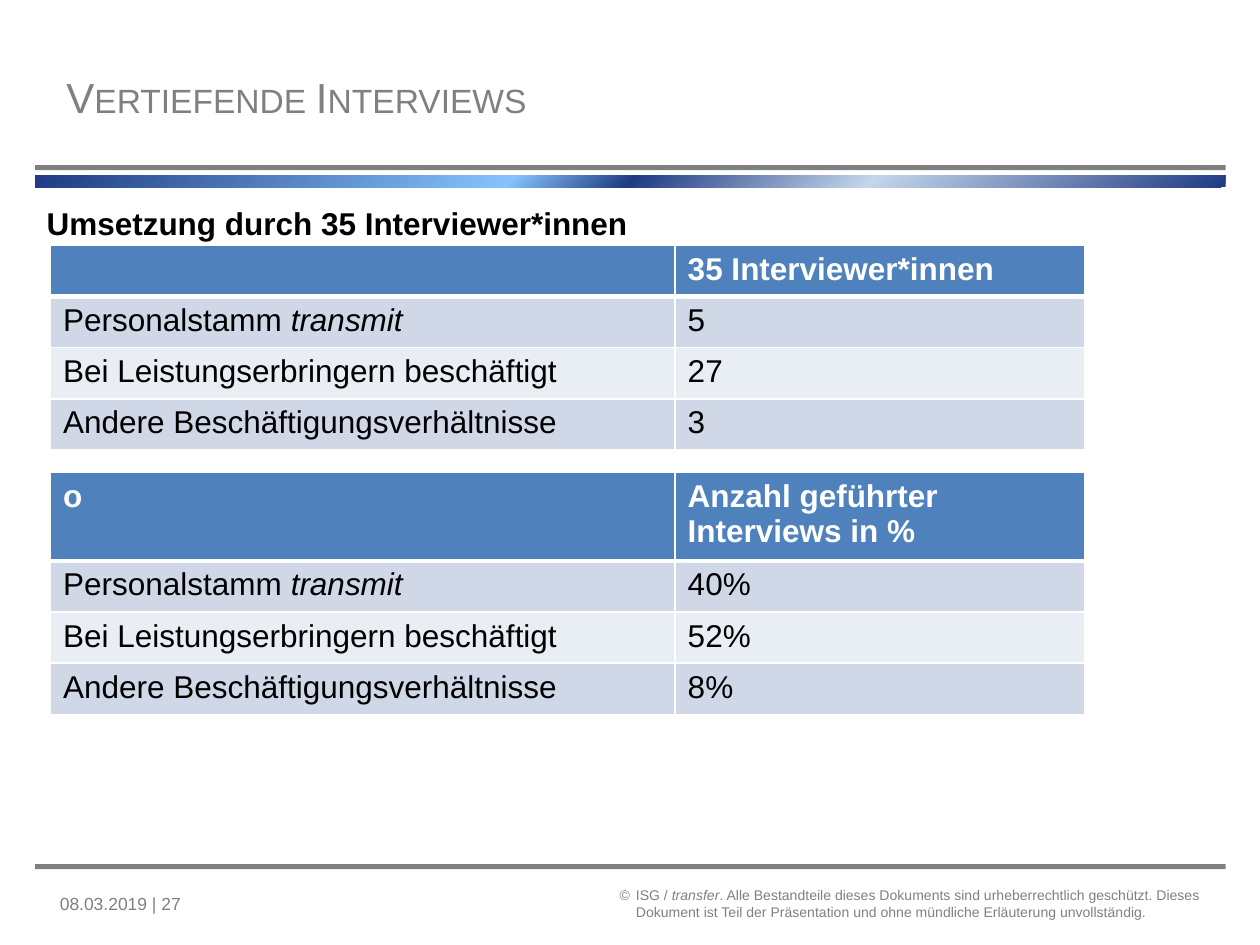
from lxml import etree
from pptx import Presentation, util as u
from pptx.dml.color import RGBColor
from pptx.enum import shapes, text
from pptx.oxml import parse_xml
from pptx.oxml.ns import nsdecls, qn

GREY, BLACK, WHITE = "808080", "000000", "FFFFFF"
BLUE, BANDS = "4F81BD", ("D0D8E8", "E9EDF4")
STOPS = ((0, "203B84"), (40, "85C2FF"), (50, "203B84"), (70, "C4D6EB"), (100, "203B84"))
FIRM = "transmit"
LABELS = (
    [("Personalstamm ", {}), (FIRM, {"slant": True})],
    [("Bei Leistungserbringern beschäftigt", {})],
    [("Andere Beschäftigungsverhältnisse", {})],
)


def paint(target, color):
    target.solid()
    target.fore_color.rgb = RGBColor.from_string(color)


def add_run(para, words, size, color, bold=False, slant=False):
    run = para.add_run()
    run.text = words
    font = run.font
    font.name, font.size = "Arial", u.Pt(size)
    font.bold, font.italic = bold, slant
    font.color.rgb = RGBColor.from_string(color)
    return run


def add_bar(slide, top, high):
    bar = slide.shapes.add_shape(
        shapes.MSO_SHAPE.RECTANGLE, u.Cm(0.71), u.Cm(top), u.Cm(24), u.Cm(high))
    bar.shadow.inherit = False
    paint(bar.fill, GREY)
    bar.line.fill.background()
    return bar


def blend(bar):
    """Fill the bar with a gradient that spreads from its top left corner."""
    stops = "".join(
        f'<a:gs pos="{pos * 1000}"><a:srgbClr val="{color}"/></a:gs>' for pos, color in STOPS)
    grad = parse_xml(
        f'<a:gradFill {nsdecls("a")} rotWithShape="1"><a:gsLst>{stops}</a:gsLst>'
        '<a:path path="circle"><a:fillToRect r="100000" b="100000"/></a:path></a:gradFill>')
    props = bar.fill._xPr
    props.replace(props.find(qn("a:solidFill")), grad)


def add_box(slide, left, top, wide, high, anchor=text.MSO_ANCHOR.MIDDLE):
    """Add a wrapping text box and return its first paragraph."""
    frame = slide.shapes.add_textbox(u.Cm(left), u.Cm(top), u.Cm(wide), u.Cm(high)).text_frame
    frame.word_wrap = True
    frame.vertical_anchor = anchor
    return frame.paragraphs[0]


def add_edge(cell, side, width):
    props = cell._tc.get_or_add_tcPr()
    edge = etree.SubElement(props, qn(f"a:ln{side}"), w=str(u.Pt(width)))
    fill = etree.SubElement(edge, qn("a:solidFill"))
    etree.SubElement(fill, qn("a:srgbClr"), val=WHITE)


def fill_cell(cell, runs, row):
    head = row == 0
    for side in "LRTB" if head else "LRB":
        add_edge(cell, side, 3 if head and side == "B" else 1)
    paint(cell.fill, BLUE if head else BANDS[(row - 1) % 2])
    para = cell.text_frame.paragraphs[0]
    para.font.size = u.Pt(18)
    for words, style in runs:
        add_run(para, words, 18, WHITE if head else BLACK, bold=head, **style)


def add_grid(slide, top, high, heads, values):
    """Add a table whose header row has its own height."""
    rows = [[[(head, {})] if head else [] for head in heads]]
    rows += [[label, [(value, {})]] for label, value in zip(LABELS, values)]
    grid = slide.shapes.add_table(
        len(rows), 2, u.Cm(1.02), u.Cm(top), u.Cm(20.85), u.Cm(high + 3.09)).table
    for col, wide in zip(grid.columns, (12.59, 8.26)):
        col.width = u.Cm(wide)
    for i, row in enumerate(rows):
        grid.rows[i].height = u.Cm(1.03 if i else high)
        for j, runs in enumerate(row):
            fill_cell(grid.cell(i, j), runs, i)


def add_foot(slide):
    date = add_box(slide, 0.71, 17.7, 3.43, 1.02)
    date.alignment = text.PP_ALIGN.CENTER
    add_run(date, "08.03.2019 | 27", 10, GREY)

    note = add_box(slide, 12.24, 17.7, 12.4, 1.02)
    props = note._p.get_or_add_pPr()
    props.set("marL", str(u.Cm(0.33)))
    props.set("indent", str(u.Cm(-0.33)))
    add_run(note, "©\tISG / ", 8, GREY)
    add_run(note, "transfer", 8, GREY, slant=True)
    add_run(note, ". Alle Bestandteile dieses Dokuments sind urheberrechtlich geschützt. "
            "Dieses Dokument ist Teil der Präsentation und ohne mündliche Erläuterung "
            "unvollständig.", 8, GREY)


def main():
    deck = Presentation()
    deck.slide_width, deck.slide_height = u.Cm(25.4), u.Cm(19.05)
    slide = deck.slides.add_slide(deck.slide_layouts[6])

    blend(add_bar(slide, 3.53, 0.25))
    for top in (3.33, 17.42):
        add_bar(slide, top, 0.1)
    add_foot(slide)

    title = add_run(add_box(slide, 1.09, 0.76, 15.6, 2.36), "Vertiefende Interviews", 24, GREY)
    title.font._element.set("cap", "small")

    lead = add_box(slide, 0.69, 3.91, 23.95, 1.04, text.MSO_ANCHOR.TOP)
    lead.line_spacing = 1.1
    add_run(lead, "Umsetzung durch 35 Interviewer*innen", 18, BLACK, bold=True)

    add_grid(slide, 4.95, 1.03, ("", "35 Interviewer*innen"), ("5", "27", "3"))
    add_grid(slide, 9.53, 1.78, ("o", "Anzahl geführter Interviews in %"), ("40%", "52%", "8%"))
    deck.save("out.pptx")


if __name__ == "__main__":
    main()
